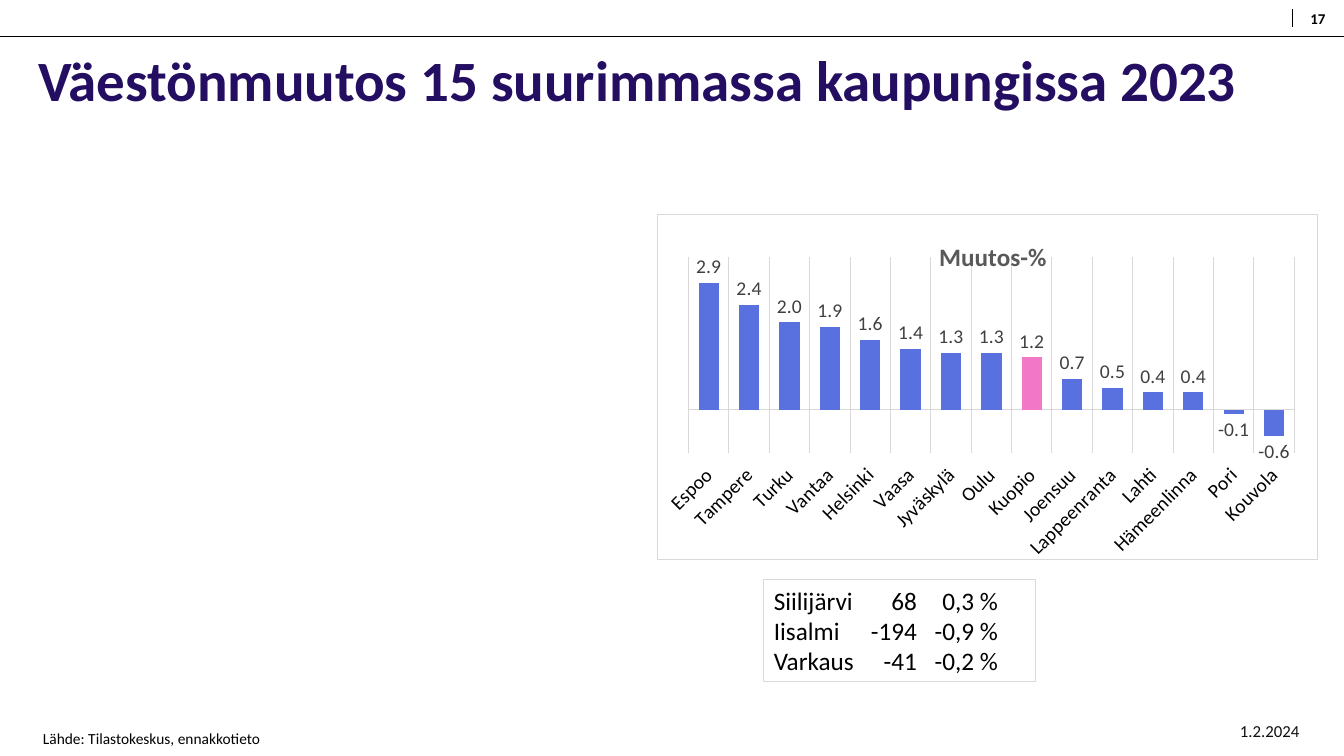
from lxml import etree
from pptx import Presentation
from pptx.chart.data import CategoryChartData
from pptx.dml.color import RGBColor
from pptx.enum.chart import XL_CHART_TYPE, XL_LABEL_POSITION, XL_TICK_LABEL_POSITION, XL_TICK_MARK
from pptx.enum.shapes import MSO_CONNECTOR, MSO_SHAPE
from pptx.enum.text import MSO_ANCHOR, PP_ALIGN
from pptx.oxml import parse_xml
from pptx.oxml.ns import nsdecls, qn
from pptx.util import Pt

COLUMN = XL_CHART_TYPE.COLUMN_CLUSTERED
OUTSIDE_END = XL_LABEL_POSITION.OUTSIDE_END
LOW = XL_TICK_LABEL_POSITION.LOW
NO_TICK = XL_TICK_MARK.NONE
STRAIGHT = MSO_CONNECTOR.STRAIGHT
RECTANGLE = MSO_SHAPE.RECTANGLE
TOP, MIDDLE = MSO_ANCHOR.TOP, MSO_ANCHOR.MIDDLE
LEFT, CENTER = PP_ALIGN.LEFT, PP_ALIGN.CENTER

PX = 9071.43  # EMU per px, 100.8 px to the inch
BLACK, GREY, BLUE, PINK = "000000", "D9D9D9", "5971DF", "F277C6"


def box(*lengths):
    return [round(length * PX) for length in lengths]


def style(font, size, color, bold=False):
    font.name, font.size, font.bold = "Calibri", Pt(size), bold
    font.color.rgb = RGBColor.from_string(color)


presentation = Presentation()
presentation.slide_width, presentation.slide_height = box(1344, 756)
slide = presentation.slides.add_slide(presentation.slide_layouts[5])

# Header rules
for ends in [(0, 36, 1344, 36), (1292, 27, 1292, 9)]:
    rule = slide.shapes.add_connector(STRAIGHT, *box(*ends))
    rule.line.color.rgb = RGBColor.from_string(BLACK)
    rule.line.width = Pt(0.5)
    etree.SubElement(rule._element.spPr, qn("a:effectLst"))

# Title
title = slide.shapes.title
title.left, title.top, title.width, title.height = box(28, 47, 1302, 118)
title.text_frame.vertical_anchor = TOP
paragraph = title.text_frame.paragraphs[0]
paragraph.alignment = LEFT
paragraph.line_spacing = 0.9
run = paragraph.add_run()
run.text = "Väestönmuutos 15 suurimmassa kaupungissa 2023"
style(run.font, 40.7, "240E61", True)

# Source and date
for text, place, size, color, wrap in [
    ("Lähde: Tilastokeskus, ennakkotieto", (33, 724, 661, 29), 11, BLACK, True),
    ("1.2.2024", (1230, 716, 80, 30), 12, "0F0F0F", False),
]:
    text_box = slide.shapes.add_textbox(*box(*place))
    text_box.text_frame.word_wrap = wrap
    run = text_box.text_frame.paragraphs[0].add_run()
    run.text = text
    style(run.font, size, color)

# Slide number
number_box = slide.shapes.add_textbox(*box(1292, 0, 52, 36))
frame = number_box.text_frame
frame.word_wrap = True
frame.vertical_anchor = MIDDLE
frame.margin_left = frame.margin_right = frame.margin_top = frame.margin_bottom = 0
frame.paragraphs[0].alignment = CENTER
run = frame.paragraphs[0].add_run()
run.text = "17"
style(run.font, 10.7, BLACK, True)

# Chart of population change
changes = {
    "Espoo": 2.9, "Tampere": 2.4, "Turku": 2.0, "Vantaa": 1.9, "Helsinki": 1.6,
    "Vaasa": 1.4, "Jyväskylä": 1.3, "Oulu": 1.3, "Kuopio": 1.2, "Joensuu": 0.7,
    "Lappeenranta": 0.5, "Lahti": 0.4, "Hämeenlinna": 0.4, "Pori": -0.1, "Kouvola": -0.6,
}
chart_data = CategoryChartData(number_format="0.0")
chart_data.categories = list(changes)
chart_data.add_series("Muutos-%", list(changes.values()))
chart = slide.shapes.add_chart(COLUMN, *box(657, 214, 661, 346), chart_data).chart
chart.has_legend = False
style(chart.font, 10, BLACK)
chart.has_title = True
run = chart.chart_title.text_frame.paragraphs[0].add_run()
run.text = "Muutos-%"
style(run.font, 18, "595959", True)

city_axis = chart.category_axis
city_axis.tick_label_position = LOW
city_axis.major_tick_mark = city_axis.minor_tick_mark = NO_TICK
city_axis.has_major_gridlines = True
for line in (city_axis.format.line, city_axis.major_gridlines.format.line):
    line.color.rgb = RGBColor.from_string(GREY)
    line.width = Pt(0.75)
style(city_axis.tick_labels.font, 14, BLACK)
city_axis._element.find(qn("c:txPr")).find(qn("a:bodyPr")).set("rot", "-2700000")

value_axis = chart.value_axis
value_axis.minimum_scale, value_axis.maximum_scale = -1, 3.5
value_axis.has_major_gridlines = False
value_axis.visible = False

plot = chart.plots[0]
plot.gap_width = 99
plot.vary_by_categories = False
series = plot.series[0]
series.invert_if_negative = False
kuopio = series.points[list(changes).index("Kuopio")]
for part, color in [(series, BLUE), (kuopio, PINK)]:
    part.format.fill.solid()
    part.format.fill.fore_color.rgb = RGBColor.from_string(color)
labels = series.data_labels
labels.show_value = True
labels.number_format, labels.number_format_is_linked = "0.0", False
labels.position = OUTSIDE_END
style(labels.font, 14, "404040")

# Manual places of the chart title and the plot area, as shares of the chart
chart_space = chart._chartSpace
for parent, index, settings in [
    (chart.chart_title._element, 1, {"xMode": "edge", "yMode": "edge", "x": 0.42, "y": 0.06}),
    (chart_space.chart.plotArea, 0, {"layoutTarget": "inner", "xMode": "edge", "yMode": "edge",
                                     "x": 0.047, "y": 0.123, "w": 0.918, "h": 0.57}),
]:
    for layout in parent.findall(qn("c:layout")):
        parent.remove(layout)
    layout = parent.makeelement(qn("c:layout"))
    manual = etree.SubElement(layout, qn("c:manualLayout"))
    for name, value in settings.items():
        etree.SubElement(manual, qn(f"c:{name}")).set("val", str(value))
    parent.insert(index, layout)
chart_space.chart.addnext(parse_xml(
    f'<c:spPr {nsdecls("c", "a")}>'
    '<a:solidFill><a:srgbClr val="FFFFFF"/></a:solidFill>'
    f'<a:ln w="{Pt(0.75)}"><a:solidFill><a:srgbClr val="{GREY}"/></a:solidFill></a:ln>'
    '</c:spPr>'))

# Neighbouring towns, with right-aligned tab columns
towns = slide.shapes.add_shape(RECTANGLE, *box(764, 580, 272, 102))
towns.shadow.inherit = False
towns.fill.background()
towns.line.color.rgb = RGBColor.from_string(GREY)
towns.line.width = Pt(0.75)
frame = towns.text_frame
frame.word_wrap = True
frame.vertical_anchor = TOP
for index, row in enumerate([
    ("Siilijärvi", "68", "0,3 %"),
    ("Iisalmi", "-194", "-0,9 %"),
    ("Varkaus", "-41", "-0,2 %"),
]):
    paragraph = frame.add_paragraph() if index else frame.paragraphs[0]
    paragraph.alignment = LEFT
    tabs = etree.SubElement(paragraph._p.get_or_add_pPr(), qn("a:tabLst"))
    for position in box(143, 224):
        etree.SubElement(tabs, qn("a:tab"), pos=str(position), algn="r")
    run = paragraph.add_run()
    run.text = "\t".join(row)
    style(run.font, 18, BLACK)

presentation.save("out.pptx")
